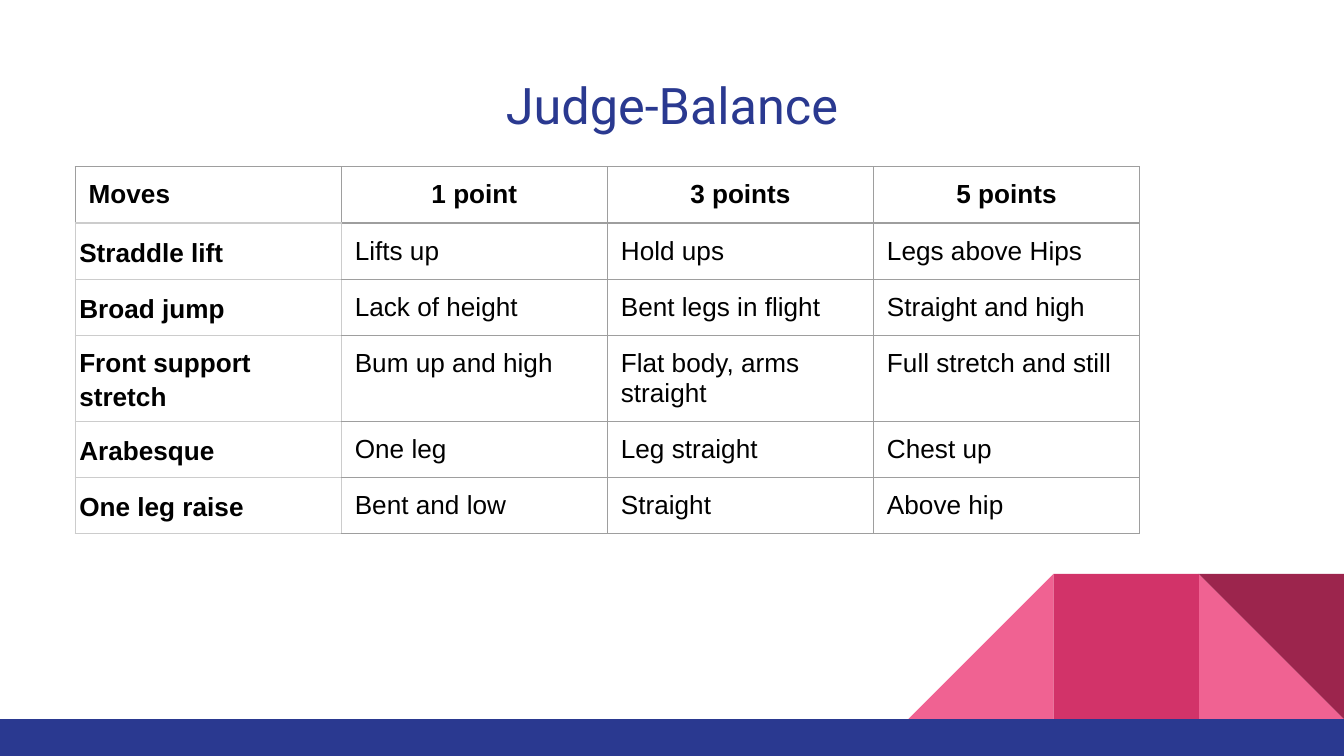
"""Build the Judge-Balance scoring slide."""
from lxml import etree
from pptx import Presentation
from pptx import util as u
from pptx.dml.color import RGBColor
from pptx.enum import shapes, text
from pptx.oxml.ns import qn

GREY, PALE = "9E9E9E", "CCCCCC"
ROWS = [
    ["Moves", "1 point", "3 points", "5 points"],
    ["Straddle lift", "Lifts up", "Hold ups", "Legs above Hips"],
    ["Broad jump", "Lack of height", "Bent legs in flight", "Straight and high"],
    ["Front support stretch", "Bum up and high", "Flat body, arms straight", "Full stretch and still"],
    ["Arabesque", "One leg", "Leg straight", "Chest up"],
    ["One leg raise", "Bent and low", "Straight", "Above hip"],
]


def rgb(value):
    return RGBColor.from_string(value)


def write(tf, words, size=14, font="Arial", color="000000", bold=False, center=False, spacing=1.0):
    p = tf.paragraphs[0]
    p.alignment = text.PP_ALIGN.CENTER if center else text.PP_ALIGN.LEFT
    p.line_spacing = spacing
    r = p.add_run()
    r.text = words
    r.font.size, r.font.name, r.font.bold = u.Pt(size), font, bold
    r.font.color.rgb = rgb(color)


prs = Presentation()
prs.slide_width, prs.slide_height = u.Inches(10), u.Inches(10 * 9 / 16)
s = prs.slides.add_slide(prs.slide_layouts[5])

RECT, TRIANGLE = shapes.MSO_SHAPE.RECTANGLE, shapes.MSO_SHAPE.RIGHT_TRIANGLE
side, top = 1.08, 4.27
for kind, left, y, width, height, color, turn, flip in [
    (TRIANGLE, 10 - side, top, side, side, "F06292", 0, False),
    (TRIANGLE, 10 - 3 * side, top, side, side, "F06292", 0, True),
    (RECT, 10 - 2 * side, top, side, side, "D23369", 0, False),
    (TRIANGLE, 10 - side, top, side, side, "9C254D", 180, False),
    (RECT, 0, top + side, 10, 0.28, "2A3990", 0, False),
]:
    sp = s.shapes.add_shape(kind, u.Inches(left), u.Inches(y), u.Inches(width), u.Inches(height))
    sp.shadow.inherit = False
    sp.fill.solid()
    sp.fill.fore_color.rgb = rgb(color)
    sp.line.fill.background()
    sp.rotation = turn
    if flip:
        sp._element.spPr.find(qn("a:xfrm")).set("flipH", "1")

title = s.shapes.title
title.left, title.top, title.width, title.height = [u.Inches(v) for v in (0.34, 0.45, 9.32, 0.66)]
tf = title.text_frame
tf.margin_left = tf.margin_right = tf.margin_top = tf.margin_bottom = u.Inches(0.1)
tf.vertical_anchor = text.MSO_ANCHOR.MIDDLE
tf.word_wrap = True
write(tf, "Judge-Balance", size=27, font="Roboto", color="2A3990", center=True)

table_height = u.Inches(2.5)
table = s.shapes.add_table(len(ROWS), 4, u.Inches(0.56), u.Inches(1.24), u.Inches(7.92), table_height).table
table.first_row = table.horz_banding = False
for column in table.columns:
    column.width = u.Inches(1.98)
for i, row in enumerate(ROWS):
    table.rows[i].height = table_height // len(ROWS)
    for j, words in enumerate(row):
        cell = table.cell(i, j)
        header, move = i == 0, i > 0 and j == 0
        cell.fill.background()
        cell.margin_left = cell.margin_right = u.Inches(0.03 if move else 0.1)
        cell.margin_top = cell.margin_bottom = u.Inches(0.02 if move else 0.1)
        cell.vertical_anchor = text.MSO_ANCHOR.MIDDLE if move else text.MSO_ANCHOR.TOP
        write(cell.text_frame, words, bold=header or move, center=header and j > 0,
              spacing=1.15 if move else 1.0)
        pale_edges = "LRTB" if move else "B" if j == 0 else "L" if j == 1 and i > 0 else ""
        tcPr = cell._tc.get_or_add_tcPr()
        for k, edge in enumerate("LRTB"):
            ln = etree.Element(qn(f"a:ln{edge}"), w=str(u.Pt(0.75)))
            fill = etree.SubElement(ln, qn("a:solidFill"))
            etree.SubElement(fill, qn("a:srgbClr"), val=PALE if edge in pale_edges else GREY)
            tcPr.insert(k, ln)

prs.save("out.pptx")
